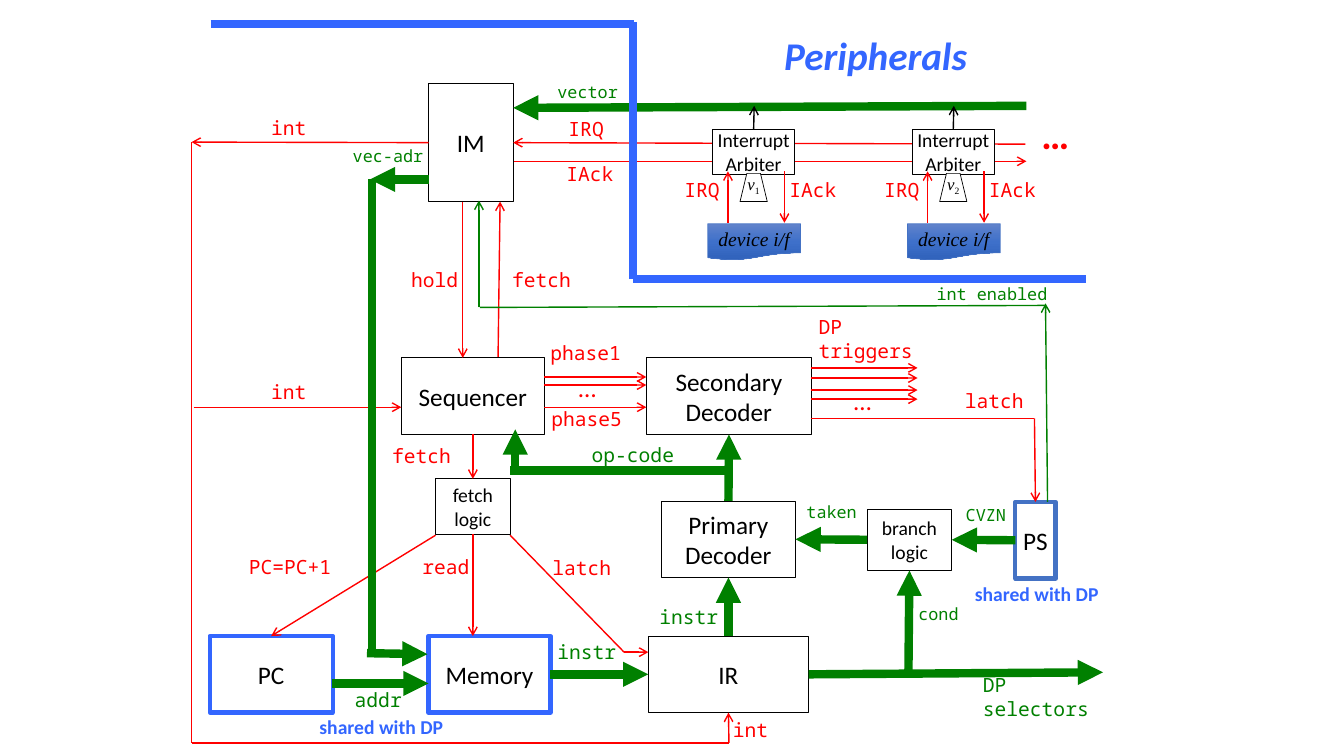
from copy import deepcopy
from dataclasses import dataclass
from typing import Any, NamedTuple

from lxml.etree import SubElement
from pptx import Presentation
from pptx.dml.color import RGBColor
from pptx.enum.shapes import MSO_CONNECTOR, MSO_SHAPE
from pptx.enum.text import MSO_ANCHOR, MSO_AUTO_SIZE, PP_ALIGN
from pptx.oxml.ns import qn
from pptx.util import Inches, Pt


@dataclass(frozen=True)
class Theme:
    red: str = "FF0000"
    green: str = "008000"
    blue: str = "3366FF"
    status_blue: str = "4472C4"
    black: str = "000000"
    white: str = "FFFFFF"
    device_gradient: tuple = ("6183CB", "3E70CA", "3062BB")
    sans: str = "Calibri"
    mono: str = "Noto Sans Mono"
    serif: str = "Times New Roman"
    heading: int = 28
    block: int = 18
    label: int = 14
    small: int = 12
    thin: float = 1
    thick: float = 6
    border: float = 0.5
    strong_border: float = 3


THEME = Theme()
TOP, LEFT, BOTTOM, RIGHT = range(4)


class Side(NamedTuple):
    shape: Any
    site: int


def add_text(paragraph, text, *, size=THEME.block, font=THEME.sans, color=THEME.black,
             bold=False, italic=False, subscript=False):
    run = paragraph.add_run()
    run.text = text
    run.font.size = Pt(size)
    run.font.name = font
    run.font.color.rgb = RGBColor.from_string(color)
    run.font.bold = bold
    run.font.italic = italic
    if subscript:
        run.font._element.set("baseline", "-25000")


def add_label(slide, text, left, top, width, height=0.34, **text_format):
    shape = slide.shapes.add_textbox(Inches(left), Inches(top), Inches(width), Inches(height))
    frame = shape.text_frame
    frame.word_wrap = False
    frame.auto_size = MSO_AUTO_SIZE.SHAPE_TO_FIT_TEXT
    for index, line in enumerate(text.split("\n")):
        paragraph = frame.add_paragraph() if index else frame.paragraphs[0]
        add_text(paragraph, line, **text_format)


def add_block(slide, text, left, top, width, height=0.76, *, kind=MSO_SHAPE.RECTANGLE,
              fill=None, line=THEME.black, line_width=THEME.border, tight=False, **text_format):
    shape = slide.shapes.add_shape(kind, Inches(left), Inches(top), Inches(width), Inches(height))
    shape.shadow.inherit = False
    if fill:
        shape.fill.solid()
        shape.fill.fore_color.rgb = RGBColor.from_string(fill)
    else:
        shape.fill.background()
    shape.line.color.rgb = RGBColor.from_string(line)
    shape.line.width = Pt(line_width)
    frame = shape.text_frame
    frame.word_wrap = True
    frame.vertical_anchor = MSO_ANCHOR.MIDDLE
    if tight:
        frame.margin_left = frame.margin_right = frame.margin_top = frame.margin_bottom = 0
    frame.paragraphs[0].alignment = PP_ALIGN.CENTER
    add_text(frame.paragraphs[0], text, **text_format)
    return shape


def add_wire(slide, start, end, color, width=THEME.thin, arrow=None):
    ends = [(0, 0) if isinstance(point, Side) else point for point in (start, end)]
    (x1, y1), (x2, y2) = ends
    connector = slide.shapes.add_connector(
        MSO_CONNECTOR.STRAIGHT, Inches(x1), Inches(y1), Inches(x2), Inches(y2))
    if isinstance(start, Side):
        connector.begin_connect(start.shape, start.site)
    if isinstance(end, Side):
        connector.end_connect(end.shape, end.site)
    connector.line.color.rgb = RGBColor.from_string(color)
    connector.line.width = Pt(width)
    if arrow:
        SubElement(connector.line._get_or_add_ln(), qn("a:tailEnd"), type=arrow)
    SubElement(connector._element.spPr, qn("a:effectLst"))


def add_signal(slide, start, end, color=THEME.red):
    add_wire(slide, start, end, color, arrow="arrow")


def add_bus(slide, start, end):
    add_wire(slide, start, end, THEME.green, THEME.thick, "triangle")


def fill_device(shape):
    shape.fill.gradient()
    shape.fill.gradient_angle = 270
    stops = shape.fill.gradient_stops
    first, middle, last = THEME.device_gradient
    for stop, color, position in ((stops[0], middle, 0.5), (stops[1], last, 1)):
        stop.color.rgb = RGBColor.from_string(color)
        stop.position = position
    stop_list = shape._element.spPr.find(".//" + qn("a:gsLst"))
    stop_list.insert(0, deepcopy(stop_list[0]))
    first_stop = shape.fill.gradient_stops[0]
    first_stop.color.rgb = RGBColor.from_string(first)
    first_stop.position = 0


def add_peripheral(slide, left, number):
    arbiter = add_block(slide, "Interrupt Arbiter", left, 1.28, 0.81, 0.45,
                        fill=THEME.white, tight=True, size=THEME.label)
    add_signal(slide, Side(arbiter, TOP), (left + 0.41, 1.05), THEME.black)
    vector = add_block(slide, "v", left + 0.27, 1.72, 0.27, 0.28, kind=MSO_SHAPE.TRAPEZOID,
                       fill=THEME.white, tight=True, size=THEME.small, font=THEME.serif, italic=True)
    vector.text_frame.margin_bottom = Inches(0.1)
    add_text(vector.text_frame.paragraphs[0], number, size=THEME.small, font=THEME.serif, subscript=True)
    add_signal(slide, (left + 0.71, 1.7), (left + 0.71, 2.21))
    add_signal(slide, (left + 0.15, 2.21), (left + 0.15, 1.7))
    device = add_block(slide, "device i/f", left - 0.05, 2.22, 0.92, 0.36,
                       kind=MSO_SHAPE.FLOWCHART_DOCUMENT, line=THEME.status_blue, tight=True,
                       size=THEME.label, font=THEME.serif, italic=True)
    fill_device(device)
    for text, offset, width in (("IRQ", -0.38, 0.56), ("IAck", 0.66, 0.67)):
        add_label(slide, text, left + offset, 1.72, width,
                  size=THEME.label, font=THEME.mono, color=THEME.red)


def add_processor_wires(slide, primary, secondary, sequencer, ir, pc, memory, ps, branch, fetch, im):
    for start, end in (
            (Side(fetch, BOTTOM), (4.69, 6.31)), ((4.32, 5.31), Side(pc, TOP)),
            (Side(sequencer, BOTTOM), Side(fetch, TOP)), ((6.19, 6.47), (6.43, 6.47)),
            ((10.26, 4.15), Side(ps, TOP)), ((10.17, 1.43), Side(im, RIGHT)),
            ((5.1, 1.6), (10.18, 1.6)), ((4.59, 2), (4.59, 3.55)), ((4.94, 3.54), (4.96, 2)),
            (Side(im, LEFT), (1.9, 1.41)), ((7.23, 7.37), Side(ir, BOTTOM)),
            ((1.92, 4.04), (3.98, 4.04))):
        add_signal(slide, start, end)
    for y in (3.74, 3.82, 4.04):
        add_signal(slide, (5.4, y), (6.41, y))
    for y in (3.65, 3.75, 3.87, 3.96):
        add_signal(slide, (8.04, y), (9.1, y))
    for start, end in (((6.19, 6.47), (5.06, 5.31)), ((8.04, 4.15), (10.26, 4.15)),
                       ((1.9, 7.37), (1.9, 1.41)), ((1.9, 7.37), (7.23, 7.37))):
        add_wire(slide, start, end, THEME.red)
    add_wire(slide, (10.37, 3.03), (4.76, 3.05), THEME.green)
    add_signal(slide, (10.39, 4.98), (10.37, 3.01), THEME.green)
    add_signal(slide, (4.75, 3.05), (4.75, 1.99), THEME.green)
    for start, end in (
            (Side(primary, TOP), Side(secondary, BOTTOM)), (Side(ir, TOP), Side(primary, BOTTOM)),
            ((3.29, 6.78), (4.25, 6.78)), (Side(memory, RIGHT), Side(ir, LEFT)),
            ((5.11, 4.67), (5.11, 4.26)), (Side(ir, RIGHT), (10.94, 6.67)),
            (Side(ps, LEFT), Side(branch, RIGHT)), ((9.01, 6.67), Side(branch, BOTTOM)),
            (Side(branch, LEFT), Side(primary, RIGHT)), ((10.18, 1.05), (5.09, 1.07)),
            ((4.25, 1.78), (3.67, 1.78)), ((3.64, 6.48), (4.24, 6.49))):
        add_bus(slide, start, end)
    for start, end in (((7.23, 4.67), (5.06, 4.67)), ((3.69, 1.78), (3.69, 6.48))):
        add_wire(slide, start, end, THEME.green, THEME.thick)


def add_labels(slide):
    for text, left, top, width in (
            ("phase1", 5.36, 3.33, 0.91), ("phase5", 5.37, 3.99, 0.91), ("fetch", 3.79, 4.35, 0.79),
            ("PC=PC+1", 2.37, 5.46, 1.03), ("read", 4.09, 5.46, 0.67), ("latch", 5.38, 5.47, 0.79),
            ("DP\ntriggers", 8.02, 3.08, 1.14), ("latch", 9.47, 3.81, 0.79),
            ("IRQ", 5.54, 1.11, 0.56), ("IAck", 5.52, 1.56, 0.67), ("int", 2.59, 1.1, 0.56),
            ("fetch", 4.98, 2.61, 0.79), ("hold", 3.98, 2.61, 0.67), ("int", 2.59, 3.72, 0.56),
            ("int", 7.17, 7.07, 0.56)):
        add_label(slide, text, left, top, width, size=THEME.label, font=THEME.mono, color=THEME.red)
    for text, left, top, width in (
            ("addr", 3.42, 6.78, 0.67), ("instr", 5.43, 6.3, 0.79), ("instr", 6.44, 5.95, 0.79),
            ("op-code", 5.77, 4.34, 1.03), ("DP\nselectors", 9.65, 6.63, 1.26)):
        add_label(slide, text, left, top, width, size=THEME.label, font=THEME.mono, color=THEME.green)
    for text, left, top, width in (
            ("CVZN", 9.48, 4.96, 0.71), ("cond", 9.01, 5.94, 0.61), ("taken", 7.9, 4.93, 0.71),
            ("vector", 5.43, 0.76, 0.81), ("int enabled", 9.19, 2.77, 1.31), ("vec-adr", 3.4, 1.4, 0.91)):
        add_label(slide, text, left, top, width, 0.3, size=THEME.small, font=THEME.mono, color=THEME.green)
    for left, top in ((3.07, 7.04), (9.57, 5.72)):
        add_label(slide, "shared with DP", left, top, 1.44, size=THEME.label, color=THEME.blue, bold=True)
    for left, top in ((8.37, 3.77), (5.64, 3.64)):
        add_label(slide, "…", left, top, 0.38, 0.4, color=THEME.red)
    add_label(slide, "…", 10.23, 1.05, 0.48, 0.57, size=THEME.heading, color=THEME.red, bold=True)
    add_label(slide, "Peripherals", 7.68, 0.26, 2.03, 0.57,
              size=THEME.heading, color=THEME.blue, bold=True, italic=True)


def main():
    presentation = Presentation()
    presentation.slide_width, presentation.slide_height = Inches(13.33), Inches(7.5)
    slide = presentation.slides.add_slide(presentation.slide_layouts[6])
    shared = {"line": THEME.blue, "line_width": THEME.strong_border}
    blocks = {
        "primary": add_block(slide, "Primary Decoder", 6.56, 4.97, 1.33),
        "secondary": add_block(slide, "Secondary Decoder", 6.41, 3.55, 1.64),
        "sequencer": add_block(slide, "Sequencer", 3.98, 3.55, 1.42),
        "ir": add_block(slide, "IR", 6.43, 6.31, 1.59),
        "pc": add_block(slide, "PC", 2.08, 6.31, 1.22, **shared),
        "memory": add_block(slide, "Memory", 4.25, 6.31, 1.21, **shared),
        "ps": add_block(slide, "PS", 10.07, 4.98, 0.4, line=THEME.status_blue,
                        line_width=THEME.strong_border, tight=True),
        "branch": add_block(slide, "branch logic", 8.6, 5.05, 0.84, 0.61, size=THEME.label),
        "fetch": add_block(slide, "fetch logic", 4.32, 4.75, 0.74, 0.55, size=THEME.label),
        "im": add_block(slide, "IM", 4.25, 0.83, 0.84, 1.17),
    }
    add_processor_wires(slide, **blocks)
    for start, end in (((2.09, 0.24), (6.29, 0.24)), ((6.28, 2.77), (6.28, 0.22)),
                       ((6.28, 2.77), (10.77, 2.77))):
        add_wire(slide, start, end, THEME.blue, THEME.thick)
    for index in range(2):
        add_peripheral(slide, 7.07 + 1.98 * index, str(index + 1))
    add_labels(slide)
    presentation.save("out.pptx")


if __name__ == "__main__":
    main()
